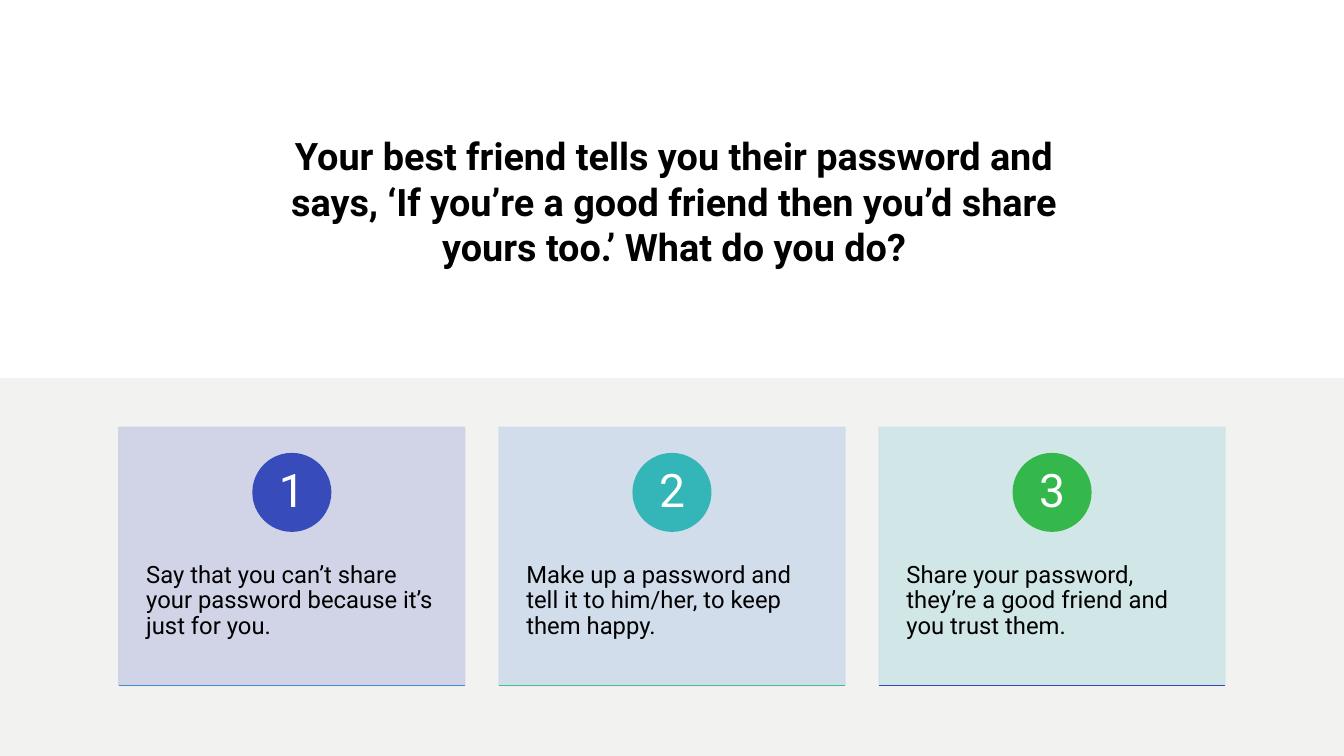
import pptx
import pptx.util
import pptx.dml.color
import pptx.enum.shapes
import pptx.enum.text
import pptx.oxml
import pptx.oxml.ns

Inches, Pt = pptx.util.Inches, pptx.util.Pt
Align, Anchor = pptx.enum.text.PP_ALIGN, pptx.enum.text.MSO_ANCHOR
Preset = pptx.enum.shapes.MSO_SHAPE

WIDTH, HEIGHT = 13.33, 7.5
FONT = "Roboto"
COLORS = {
    "white": "FFFFFF", "black": "000000", "band": "F2F3F0",
    "lilac": "CED0E7", "sky": "CFDBEC", "mint": "CEE5E6",
    "indigo": "374BBA", "teal": "34B6B8", "green": "34B84C",
    "blue": "4690CA", "jade": "42C18F",
}
QUESTION = ("Your best friend tells you their password and says, "
            "‘If you’re a good friend then you’d share yours too.’ What do you do?")
# Answer, card colour, badge colour, base line colour
ANSWERS = [
    ("Say that you can’t share your password because it’s just for you.",
     "lilac", "indigo", "blue"),
    ("Make up a password and tell it to him/her, to keep them happy.",
     "sky", "teal", "jade"),
    ("Share your password, they’re a good friend and you trust them.",
     "mint", "green", "indigo"),
]
# Card grid
CARD_LEFT, CARD_TOP = 1.18, 4.24
CARD_WIDTH, CARD_HEIGHT, CARD_STEP = 3.43, 2.56, 3.77


def rgb(name):
    return pptx.dml.color.RGBColor.from_string(COLORS[name])


def set_alpha(color_format_owner, percent):
    """Make every solid colour below the element partly transparent."""
    for color in color_format_owner.iter(pptx.oxml.ns.qn("a:srgbClr")):
        alpha = color.makeelement(pptx.oxml.ns.qn("a:alpha"), {"val": str(percent * 1000)})
        color.append(alpha)


def add_block(page, preset, box, color, outlined=True):
    block = page.shapes.add_shape(preset, *map(Inches, box))
    block.shadow.inherit = False
    block.fill.solid()
    block.fill.fore_color.rgb = rgb(color)
    if outlined:
        block.line.color.rgb = rgb(color)
        block.line.width = Pt(1)
    else:
        block.line.fill.background()
    return block


def write(frame, text, size, color, align, anchor, bold=False, spacing=None):
    frame.text = text
    frame.word_wrap = True
    frame.auto_size = pptx.enum.text.MSO_AUTO_SIZE.NONE
    frame.vertical_anchor = anchor
    para = frame.paragraphs[0]
    para.alignment = align
    if spacing:
        para.line_spacing = spacing
    font = para.runs[0].font
    font.name, font.size, font.bold = FONT, Pt(size), bold
    font.color.rgb = rgb(color)


def add_label(page, box, margins, text, size, color, align, anchor):
    label = page.shapes.add_textbox(*map(Inches, box))
    frame = label.text_frame
    frame.margin_left = frame.margin_right = Inches(margins[0])
    frame.margin_top = frame.margin_bottom = Inches(margins[1])
    write(frame, text, size, color, align, anchor, spacing=0.9)


def add_question(page, box):
    title = page.shapes.title
    title.left, title.top, title.width, title.height = map(Inches, box)
    write(title.text_frame, QUESTION, 27, "black", Align.CENTER, Anchor.MIDDLE, bold=True)


def add_badge(page, box, number, color):
    left, top, size = box
    inset = 0.11
    add_block(page, Preset.OVAL, (left, top, size, size), color)
    inner = size - 2 * inset
    add_label(page, (left + inset, top + inset, inner, inner), (0.06, 0.01),
              str(number), 33, "white", Align.CENTER, Anchor.MIDDLE)


def add_card(page, box, number, answer, card_color, badge_color, line_color):
    left, top, width, height = box
    card = add_block(page, Preset.RECTANGLE, box, card_color)
    set_alpha(card.element.spPr, 90)

    # Answer text in the lower part of the card
    add_label(page, (left, top + 0.98, width, 0.6 * height), (0.27, 0.36),
              answer, 17, "black", Align.LEFT, Anchor.TOP)

    # Number badge, centred across the card
    badge_size = 0.77
    add_badge(page, (left + (width - badge_size) / 2, top + 0.26, badge_size),
              number, badge_color)

    # Base line
    line = page.shapes.add_connector(
        pptx.enum.shapes.MSO_CONNECTOR.STRAIGHT,
        *map(Inches, (left, top + height, left + width, top + height)))
    line.line.color.rgb = rgb(line_color)
    line.line.width = Pt(1)
    properties = line.element.spPr
    properties.append(properties.makeelement(pptx.oxml.ns.qn("a:effectLst"), {}))


def add_answers(page, box):
    add_block(page, Preset.RECTANGLE, box, "band", outlined=False)
    for column, (answer, *colors) in enumerate(ANSWERS):
        card_box = (CARD_LEFT + column * CARD_STEP, CARD_TOP, CARD_WIDTH, CARD_HEIGHT)
        add_card(page, card_box, column + 1, answer, *colors)


def main():
    deck = pptx.Presentation()
    deck.slide_width, deck.slide_height = Inches(WIDTH), Inches(HEIGHT)
    page = deck.slides.add_slide(deck.slide_layouts[5])
    page.background.fill.solid()
    page.background.fill.fore_color.rgb = rgb("white")
    add_question(page, (2.53, 1.06, 8.31, 1.87))
    add_answers(page, (0, HEIGHT / 2, WIDTH, HEIGHT / 2))
    deck.save("out.pptx")


if __name__ == "__main__":
    main()
